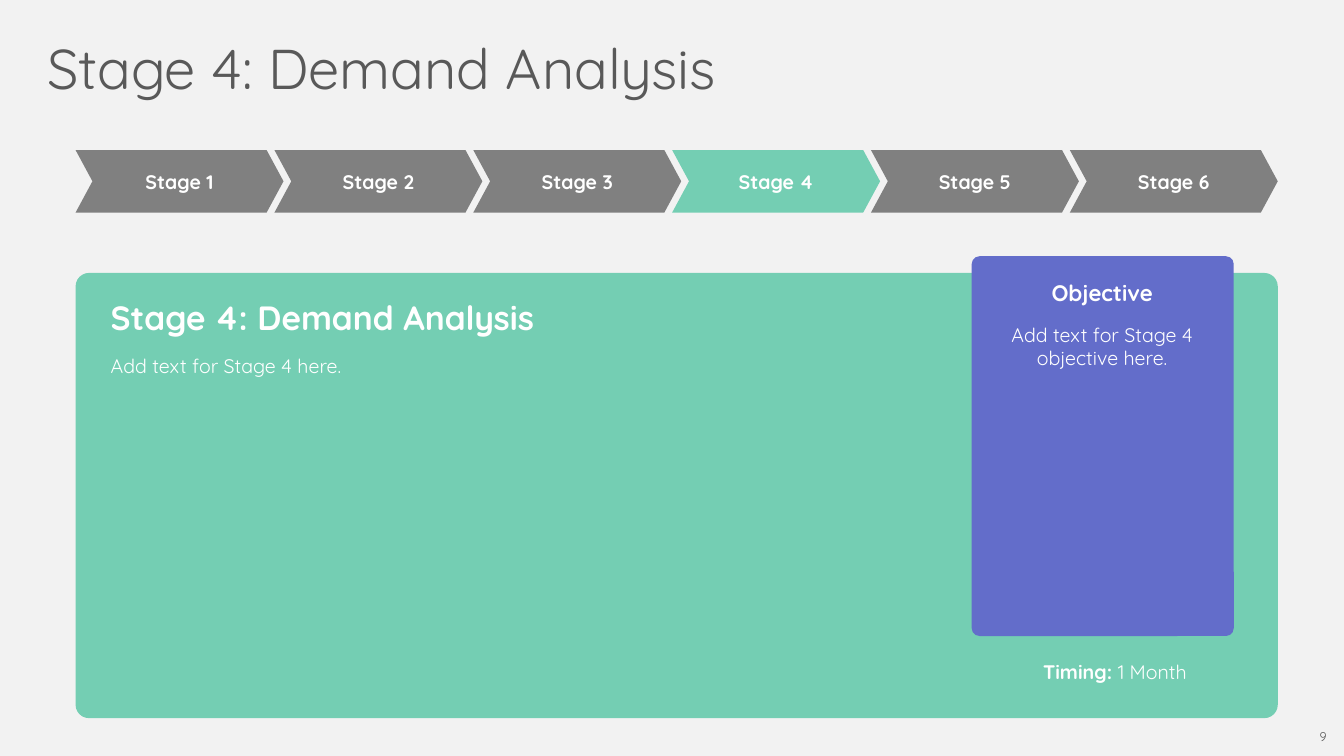
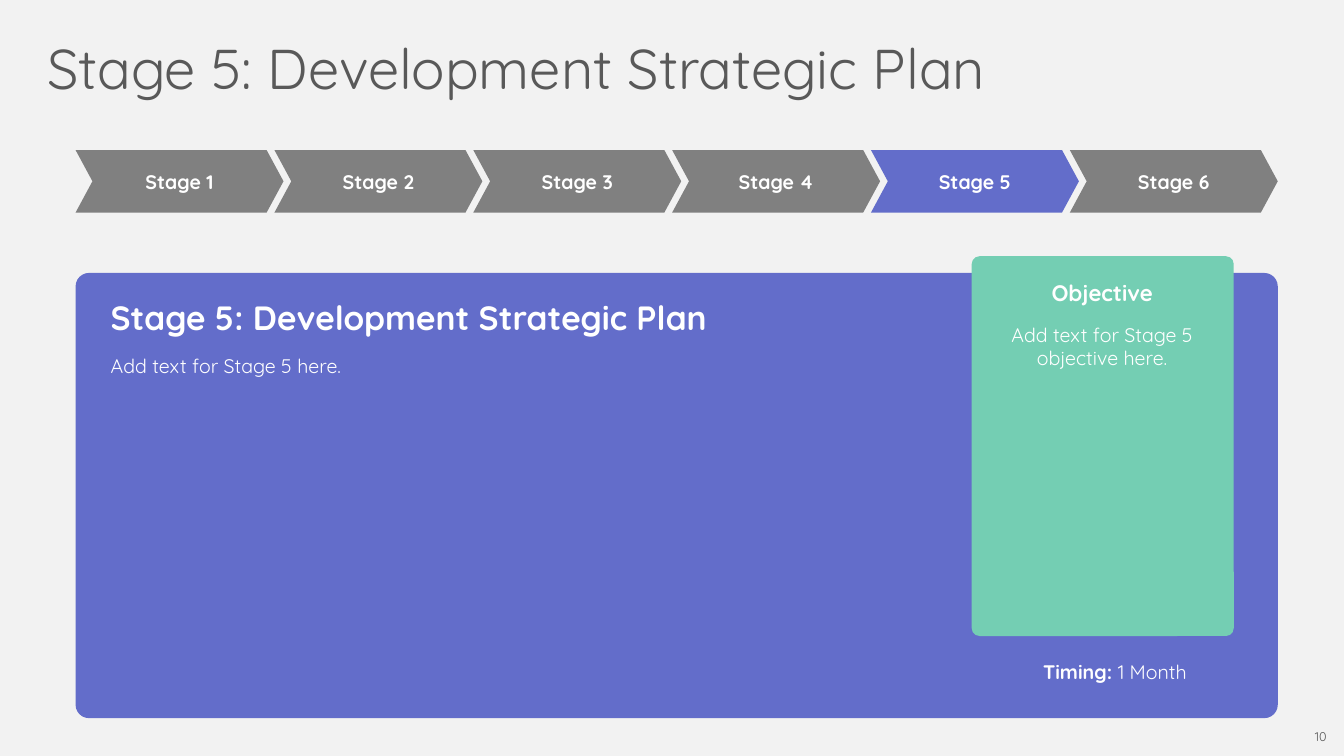
from dataclasses import dataclass
from typing import NamedTuple

from pptx import Presentation
from pptx.dml.color import RGBColor as RGB
from pptx.enum.shapes import MSO_SHAPE as Kind
from pptx.enum.text import MSO_ANCHOR as Anchor, PP_ALIGN as Align
from pptx.util import Pt


# Colours and type sizes
@dataclass(frozen=True)
class Theme:
    font: str = "Quicksand"
    back: str = "F2F2F2"
    ink: str = "595959"
    gray: str = "808080"
    white: str = "FFFFFF"
    mint: str = "74CEB3"
    blue: str = "636DCA"
    title: int = 40
    head: int = 24
    label: int = 16
    body: int = 14
    note: int = 9


class Box(NamedTuple):
    left: float
    top: float
    width: float
    height: float

    def lengths(self) -> list:
        return [Pt(n) for n in self]


class Run(NamedTuple):
    text: str
    size: int
    bold: bool = False
    color: str = Theme.white


class Para(NamedTuple):
    runs: list[Run]
    before: int = 0


@dataclass
class Stage:
    num: int
    name: str
    page: int
    main: str
    side: str
    timing: str = "1 Month"

    @property
    def title(self) -> str:
        return f"Stage {self.num}: {self.name}"


LOOK = Theme()
COUNT = 6
GAP = 12

# Layout in points
TITLE = Box(26.64, 20.16, 823.68, 55.44)
PAGE = Box(928.08, 516.96, 26.64, 18)
STEP = Box(54, 107.2, 148.5, 44.6)
PANEL = Box(54, 195, 858.7, 318)
CARD = Box(694.1, 183, 187.2, 271.3)
GOAL = Box(709.92, 195.84, 154.8, 72.72)
TIME = Box(738, 468, 132.48, 24.48)
TEXT = Box(72, 208.8, 570.96, 65.52)

STAGES = [
    Stage(4, "Demand Analysis", 9, LOOK.mint, LOOK.blue),
    Stage(5, "Development Strategic Plan", 10, LOOK.blue, LOOK.mint),
]


def apply(obj, values: dict) -> None:
    for key, value in values.items():
        setattr(obj, key, value)


def write(shape, paras: list[Para], align=Align.LEFT, anchor=Anchor.TOP) -> None:
    frame = shape.text_frame
    apply(frame, {"word_wrap": True, "vertical_anchor": anchor})
    for i, item in enumerate(paras):
        para = frame.add_paragraph() if i else frame.paragraphs[0]
        apply(para, {"alignment": align, "space_before": Pt(item.before)})
        for part in item.runs:
            run = para.add_run()
            run.text = part.text
            apply(run.font, {"name": LOOK.font, "size": Pt(part.size),
                             "bold": part.bold})
            run.font.color.rgb = RGB.from_string(part.color)


def label(slide, box: Box, paras: list[Para], align=Align.LEFT) -> None:
    write(slide.shapes.add_textbox(*box.lengths()), paras, align)


def block(slide, kind, box: Box, color: str, curve: float):
    shape = slide.shapes.add_shape(kind, *box.lengths())
    shape.adjustments[0] = curve
    shape.shadow.inherit = False
    shape.fill.solid()
    shape.fill.fore_color.rgb = RGB.from_string(color)
    shape.line.fill.background()
    return shape


def steps(slide, stage: Stage) -> None:
    pitch = (PANEL.width - STEP.width) / (COUNT - 1)
    for i in range(COUNT):
        num = i + 1
        box = STEP._replace(left=STEP.left + i * pitch)
        color = stage.main if num == stage.num else LOOK.gray
        shape = block(slide, Kind.CHEVRON, box, color, 0.27)
        write(shape, [Para([Run(f"Stage {num}", LOOK.body, True)])],
              Align.CENTER, Anchor.MIDDLE)


def build(slide, stage: Stage) -> None:
    # Title and page number
    label(slide, TITLE,
          [Para([Run(stage.title, LOOK.title, color=LOOK.ink)])])
    label(slide, PAGE,
          [Para([Run(str(stage.page), LOOK.note, color=LOOK.ink)])],
          Align.RIGHT)

    # Stage bar
    steps(slide, stage)

    # Panel and objective card
    block(slide, Kind.ROUNDED_RECTANGLE, PANEL, stage.main, 0.03)
    block(slide, Kind.ROUNDED_RECTANGLE, CARD, stage.side, 0.03)

    # Panel text
    label(slide, GOAL, [
        Para([Run("Objective", LOOK.label, True)]),
        Para([Run(f"Add text for Stage {stage.num} objective here.",
                  LOOK.body)], GAP),
    ], Align.CENTER)
    label(slide, TIME, [Para([Run("Timing: ", LOOK.body, True),
                              Run(stage.timing, LOOK.body)])])
    label(slide, TEXT, [
        Para([Run(stage.title, LOOK.head, True)]),
        Para([Run(f"Add text for Stage {stage.num} here.", LOOK.body)], GAP),
    ])


def main() -> None:
    deck = Presentation()
    apply(deck, {"slide_width": Pt(960), "slide_height": Pt(540)})
    fill = deck.slide_master.background.fill
    fill.solid()
    fill.fore_color.rgb = RGB.from_string(LOOK.back)
    blank = deck.slide_layouts[6]
    for stage in STAGES:
        build(deck.slides.add_slide(blank), stage)
    deck.save("out.pptx")


if __name__ == "__main__":
    main()
